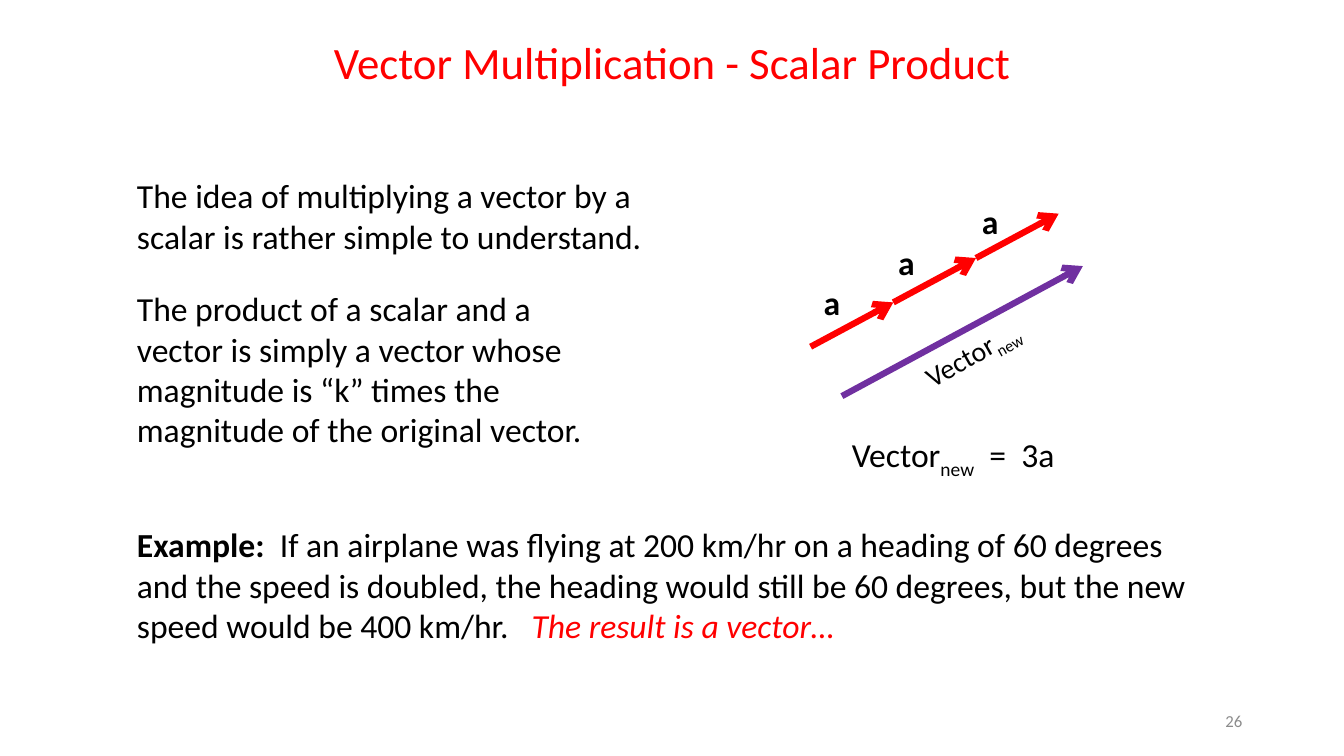
from lxml.etree import SubElement
from pptx import Presentation
from pptx.dml.color import RGBColor
from pptx.enum.shapes import MSO_CONNECTOR
from pptx.enum.text import MSO_ANCHOR, PP_ALIGN
from pptx.oxml.ns import qn
from pptx.util import Inches, Pt

COLORS = {"text": "000000", "accent": "FF0000", "result": "7030A0", "muted": "8C8C8C"}
FONT = "Calibri"
BOLD = {"bold": True}
SUBSCRIPT = {"baseline": "-25000"}


def add_text(s, box, runs, size=24, color="text", align=PP_ALIGN.LEFT,
             anchor=MSO_ANCHOR.TOP, wrap=True, rotation=0):
    sp = s.shapes.add_textbox(*map(Inches, box))
    sp.rotation = rotation
    tf = sp.text_frame
    tf.word_wrap = wrap
    tf.vertical_anchor = anchor
    p = tf.paragraphs[0]
    p.alignment = align
    for text, style in runs:
        r = p.add_run()
        r.text = text
        values = {"name": FONT, "size": Pt(size), "bold": False, "italic": False}
        values.update({k: v for k, v in style.items() if k in values})
        for name, value in values.items():
            setattr(r.font, name, value)
        r.font.color.rgb = RGBColor.from_string(COLORS[style.get("color", color)])
        if "baseline" in style:
            r.font._element.set("baseline", style["baseline"])


def add_vector(s, start, end, color):
    sp = s.shapes.add_connector(MSO_CONNECTOR.STRAIGHT, *map(Inches, (*start, *end)))
    sp.line.color.rgb = RGBColor.from_string(COLORS[color])
    sp.line.width = Pt(4.5)
    SubElement(sp.line._get_or_add_ln(), qn("a:tailEnd"), type="arrow")
    SubElement(sp._element.spPr, qn("a:effectLst"))


def add_title(s, box):
    add_text(s, box, [("Vector Multiplication - Scalar Product", {})],
             size=32, color="accent", align=PP_ALIGN.CENTER)


def add_explanation(s, box):
    x, y, w, h = box
    add_text(s, (x, y, w, 0.91), [
        ("The idea of multiplying a vector by a scalar is rather simple to understand.", {})])
    add_text(s, (x, y + 1.12, w - 0.36, h - 1.12), [
        ("The product of a scalar and a vector is simply a vector whose magnitude "
         "is “k” times the magnitude of the original vector.", {})])


def add_diagram(s, box):
    x, y, w, h = box
    dx, dy = 0.82, 0.44
    label_offsets = [(0.03, 0.81), (0.77, 0.41), (1.6, 0)]
    for i, (label_x, label_y) in enumerate(label_offsets):
        start = x + i * dx, y + 1.5 - i * dy
        add_vector(s, start, (start[0] + dx, start[1] - dy), "accent")
        add_text(s, (x + label_x, y + label_y, 0.37, 0.5), [("a", BOLD)], wrap=False)
    add_vector(s, (x + 0.31, y + 1.99), (x + 2.7, y + 0.7), "result")
    vector_new = [("Vector", {}), ("new", SUBSCRIPT)]
    add_text(s, (x + 0.96, y + 1.22, 1.74, 0.44), vector_new, size=20, rotation=330.4)
    add_text(s, (x + 0.31, y + h - 0.5, w - 0.31, 0.5), vector_new + [("  =  3a", {})])


def add_example(s, box):
    add_text(s, box, [
        ("Example:  ", BOLD),
        ("If an airplane was flying at 200 km/hr on a heading of 60 degrees and the "
         "speed is doubled, the heading would still be 60 degrees, but the new speed "
         "would be 400 km/hr.   ", {}),
        ("The result is a vector…", {"color": "accent", "italic": True})])


def add_page_number(s, box):
    add_text(s, box, [("26", {})], size=12, color="muted",
             align=PP_ALIGN.RIGHT, anchor=MSO_ANCHOR.MIDDLE)


def main():
    prs = Presentation()
    prs.slide_width, prs.slide_height = Inches(13.33), Inches(7.5)
    s = prs.slides.add_slide(prs.slide_layouts[6])
    add_title(s, (2.97, 0.3, 7.4, 0.64))
    add_explanation(s, (1.26, 1.69, 5.29, 2.84))
    add_diagram(s, (8.04, 1.94, 3.23, 2.82))
    add_example(s, (1.26, 5.15, 10.7, 1.31))
    add_page_number(s, (9.42, 6.95, 3, 0.4))
    prs.save("out.pptx")


if __name__ == "__main__":
    main()
